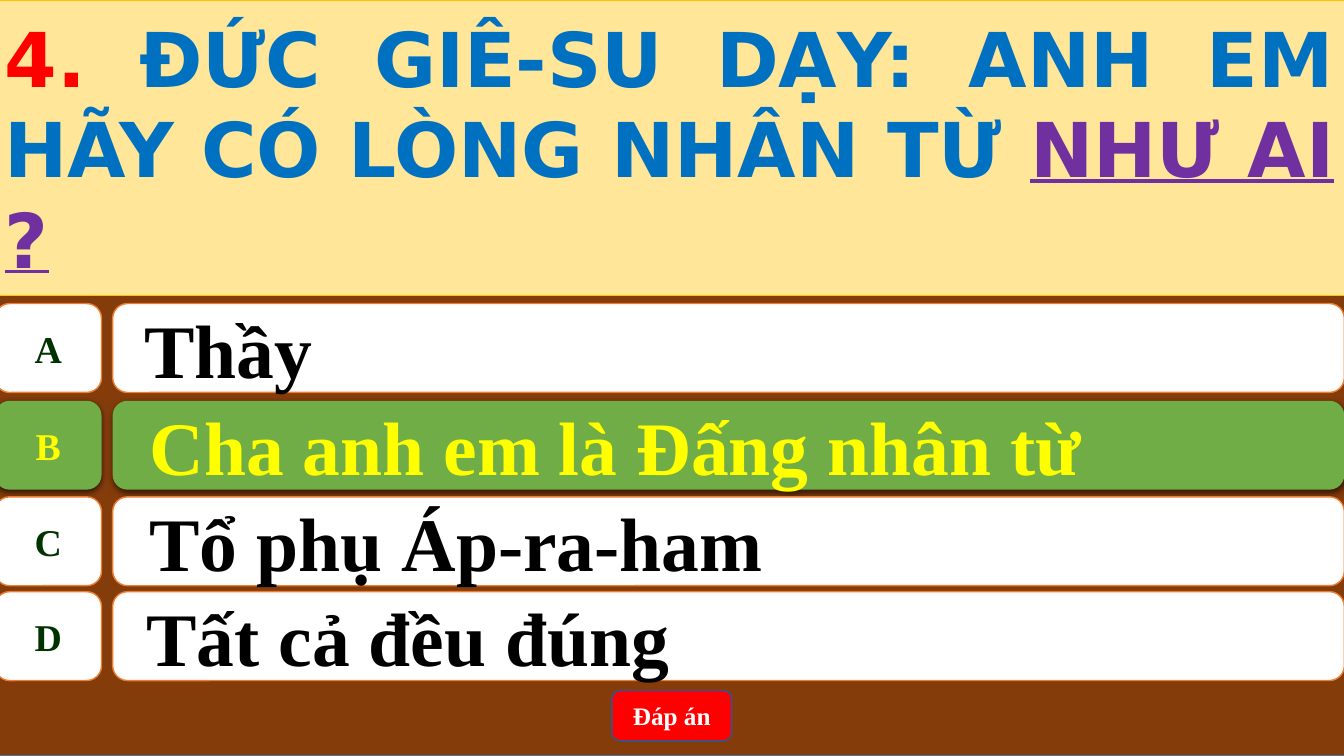
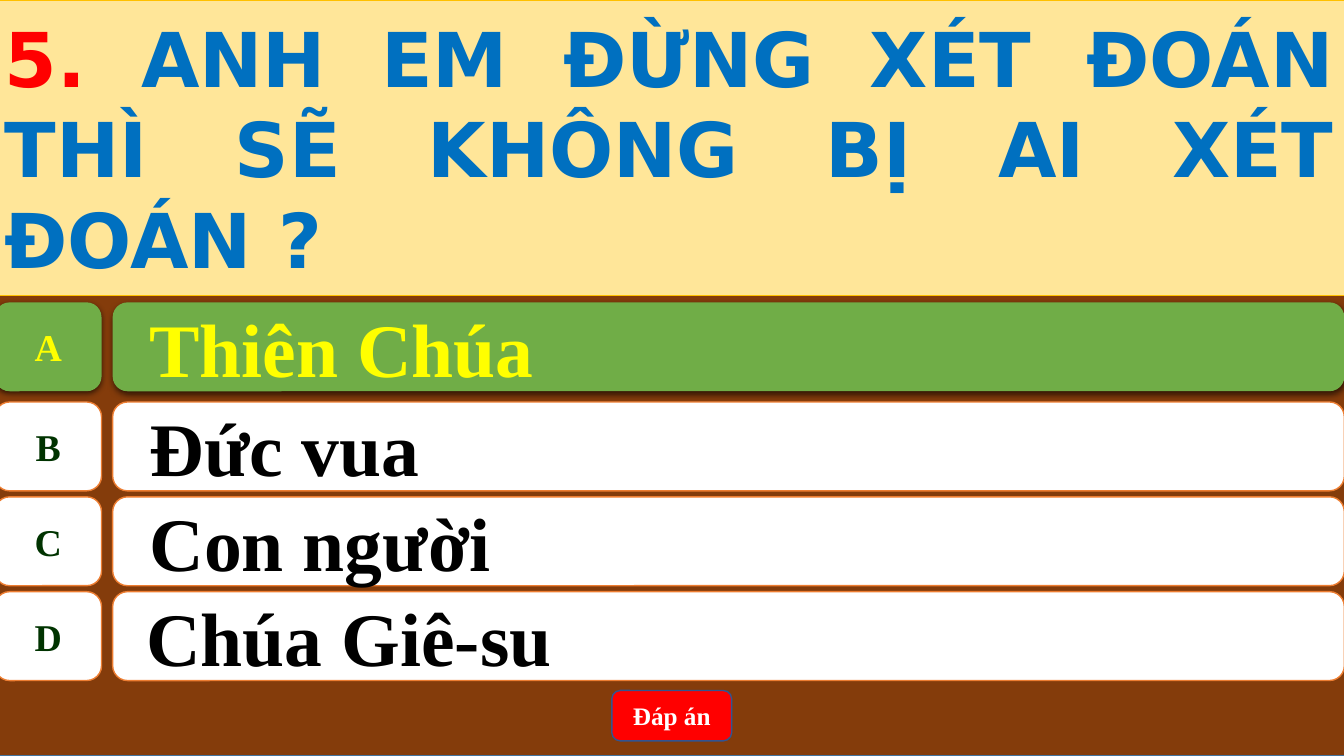
from lxml.etree import SubElement
from pptx import Presentation
from pptx.dml.color import RGBColor
from pptx.enum.shapes import MSO_SHAPE as Preset
from pptx.enum.text import MSO_ANCHOR as Anchor, PP_ALIGN as Align
from pptx.oxml.ns import qn
from pptx.util import Cm, Pt

# Shared style
SERIF, SANS = "Times New Roman", "DejaVu Sans"
BROWN, CREAM, WHITE, GREEN = "843C0B", "FFE699", "FFFFFF", "70AD47"
ORANGE, GOLD, RED, YELLOW = "ED7D31", "FFC000", "FF0000", "FFFF00"
BLUE, PURPLE, BLACK, DARK_GREEN = "0070C0", "7030A0", "000000", "003300"
FRAME_BLUE, BUTTON_BLUE = "43739E", "325491"

# Shared layout, in centimetres
SLIDE_WIDTH, SLIDE_HEIGHT = 33.87, 19.05
LEFT, FULL_WIDTH = -0.13, 34.01
QUESTION_HEIGHT = 7.44
ROW_HEIGHT, LABEL_WIDTH, BAR_OFFSET = 2.24, 2.69, 2.97
ROW_TOPS = (7.65, 10.13, 12.52, 14.91)
TEXT_INSETS = (0.69, 0.82, 0.82, 0.74)
CORRECT_INSET, CORRECT_LIFT = 0.82, 0.03

# Each question: its coloured runs, its answers and the correct letter
QUESTIONS = [
    ([("4. ", RED), ("ĐỨC GIÊ-SU DẠY: ANH EM HÃY CÓ LÒNG NHÂN TỪ ", BLUE),
      ("NHƯ AI ?", PURPLE)],
     ["Thầy", "Cha anh em là Đấng nhân từ", "Tổ phụ Áp-ra-ham",
      "Tất cả đều đúng"], "B"),
    ([("5. ", RED),
      ("ANH EM ĐỪNG XÉT ĐOÁN THÌ SẼ KHÔNG BỊ AI XÉT ĐOÁN ?", BLUE)],
     ["Thiên Chúa", "Đức vua", "Con người", "Chúa Giê-su"], "A"),
]


def rgb(color):
    return RGBColor.from_string(color)


def add_box(slide, preset, box, fill, line=None, line_width=1):
    """Add a filled shape; box is left, top, width, height."""
    shape = slide.shapes.add_shape(preset, *(Cm(length) for length in box))
    shape.shadow.inherit = False
    shape.fill.solid()
    shape.fill.fore_color.rgb = rgb(fill)
    if line:
        shape.line.color.rgb = rgb(line)
        shape.line.width = Pt(line_width)
    else:
        shape.line.fill.background()
    return shape


def write(shape, runs, size, font=SERIF, align=Align.CENTER):
    """Fill a shape with one bold paragraph of (text, colour) runs."""
    shape.text_frame.vertical_anchor = Anchor.MIDDLE
    paragraph = shape.text_frame.paragraphs[0]
    paragraph.alignment = align
    paragraph.font.name = font
    paragraph.font.size = Pt(size)
    paragraph.font.bold = True
    for text, color in runs:
        run = paragraph.add_run()
        run.text = text
        run.font.color.rgb = rgb(color)
        if color == PURPLE:
            run.font.underline = True


def add_shadow(shape):
    effects = shape._element.spPr.find(qn("a:effectLst"))
    shadow = SubElement(effects, qn("a:outerShdw"), blurRad=str(Pt(4.5)),
                        dist=str(Pt(1.5)), dir="5400000", algn="ctr",
                        rotWithShape="0")
    color = SubElement(shadow, qn("a:srgbClr"), val=BLACK)
    SubElement(color, qn("a:alpha"), val="63000")


def add_question(slide, box, runs):
    band = add_box(slide, Preset.RECTANGLE, box, CREAM, GOLD, 0.5)
    write(band, runs, 54, SANS, Align.JUSTIFY)


def add_answer(slide, box, letter, answer, inset, correct):
    """Add a letter label and its answer bar."""
    left, top, width, height = box
    fill, line = (GREEN, None) if correct else (WHITE, ORANGE)
    bar_box = (left + BAR_OFFSET, top, width - BAR_OFFSET, height)
    bar = add_box(slide, Preset.ROUNDED_RECTANGLE, bar_box, fill, line)
    bar.text_frame.margin_left = Cm(inset)
    write(bar, [(answer, YELLOW if correct else BLACK)], 54, align=Align.LEFT)

    label_box = (left, top, LABEL_WIDTH, height)
    label = add_box(slide, Preset.FLOWCHART_ALTERNATE_PROCESS, label_box, fill, line)
    label.text_frame.word_wrap = False
    write(label, [(letter, YELLOW if correct else DARK_GREEN)], 27)
    if correct:
        add_shadow(bar)
        add_shadow(label)


def add_button(slide, box):
    button = add_box(slide, Preset.ROUNDED_RECTANGLE, box, RED, BUTTON_BLUE)
    write(button, [("Đáp án", WHITE)], 18)


def add_quiz_slide(presentation, question, answers, correct_letter):
    slide = presentation.slides.add_slide(presentation.slide_layouts[6])
    # Backdrop and question band
    add_box(slide, Preset.RECTANGLE, (LEFT, 0, FULL_WIDTH, SLIDE_HEIGHT),
            BROWN, FRAME_BLUE)
    add_question(slide, (LEFT, 0, FULL_WIDTH, QUESTION_HEIGHT), question)
    # Answer rows
    for letter, answer, top, inset in zip("ABCD", answers, ROW_TOPS, TEXT_INSETS):
        correct = letter == correct_letter
        if correct:
            top, inset = top - CORRECT_LIFT, CORRECT_INSET
        add_answer(slide, (LEFT, top, FULL_WIDTH, ROW_HEIGHT),
                   letter, answer, inset, correct)
    # Answer button
    add_button(slide, (15.42, 17.4, 3.02, 1.27))


def main():
    presentation = Presentation()
    presentation.slide_width = Cm(SLIDE_WIDTH)
    presentation.slide_height = Cm(SLIDE_HEIGHT)
    for question, answers, correct_letter in QUESTIONS:
        add_quiz_slide(presentation, question, answers, correct_letter)
    presentation.save("out.pptx")


if __name__ == "__main__":
    main()
